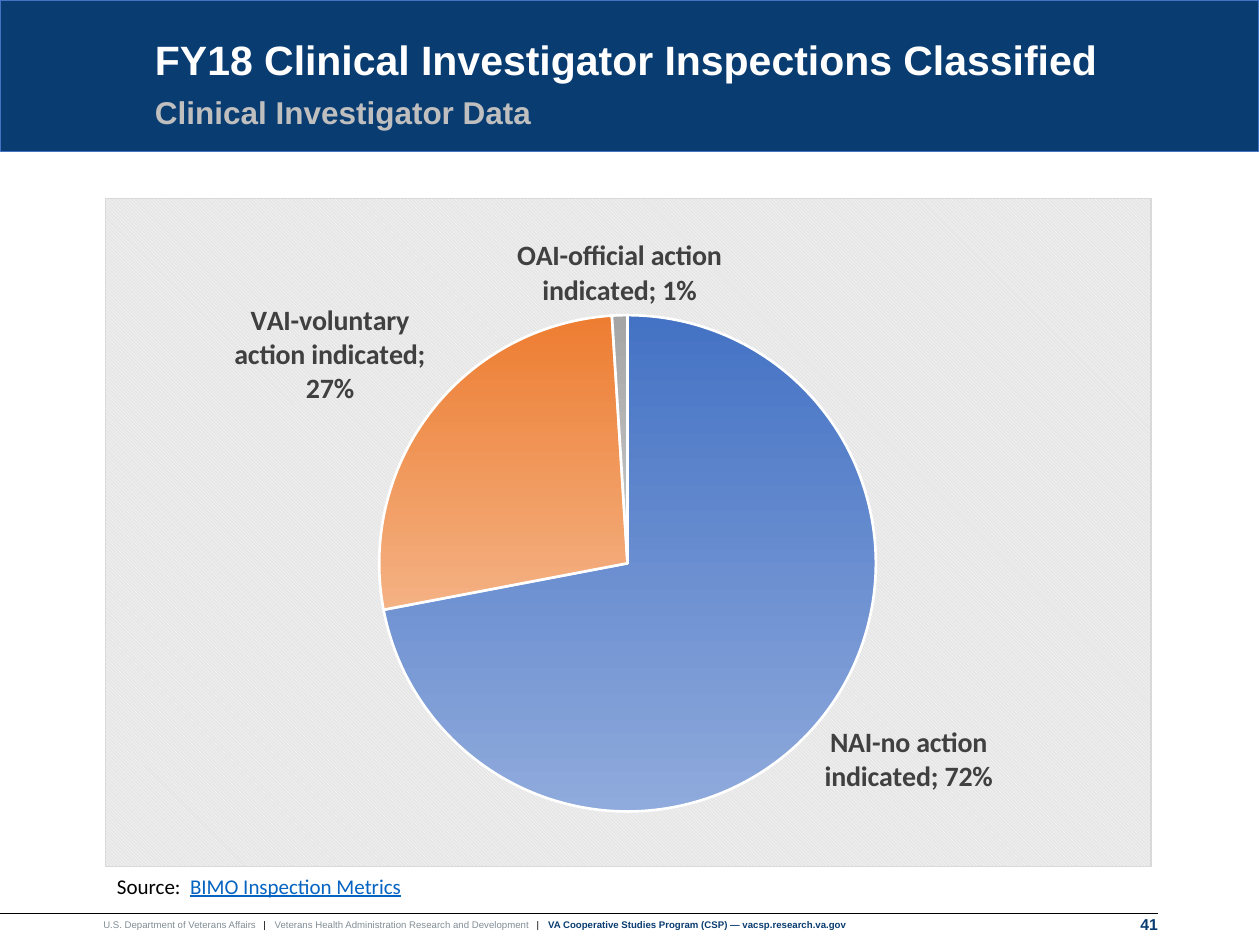
from dataclasses import dataclass

from lxml import etree
from pptx import Presentation
from pptx import util as u
from pptx.chart.data import CategoryChartData
from pptx.dml.color import RGBColor
from pptx.enum import chart as ch, shapes, text
from pptx.oxml import parse_xml
from pptx.oxml.ns import nsdecls, qn

IN = u.Inches


@dataclass(frozen=True)
class Theme:
    head: str = "Arial"
    body: str = "Calibri"
    navy: str = "093C71"
    blue: str = "4472C4"
    white: str = "FFFFFF"
    black: str = "000000"
    silver: str = "BFBFBF"
    slate: str = "828E96"
    dark: str = "404040"
    link: str = "0563C1"
    edge: str = "D9D9D9"
    panel: str = "E6E6E6"
    title: float = 23.4
    sub: float = 18
    label: float = 16
    note: float = 12
    base: float = 10
    num: float = 9
    foot: float = 5.5


T = Theme()
SLICES = [
    ("NAI-no action indicated", 0.72, (T.blue, "8FAADC")),
    ("VAI-voluntary action indicated", 0.27, ("ED7D31", "F4B183")),
    ("OAI-official action indicated", 0.01, ("A5A5A5", "C9C9C9")),
]


def rgb(code):
    return RGBColor.from_string(code)


def style(font, name, size, color, bold=False, line=False):
    font.name, font.size, font.bold = name, u.Pt(size), bold
    font.color.rgb = rgb(color)
    if line:
        font.underline = True


def write(shape, runs, name=T.head, size=T.note, color=T.black, bold=False,
          align=None, anchor=text.MSO_ANCHOR.TOP, pad=(0, 0), space=None,
          tabs=()):
    """Fill a shape with one paragraph; runs are (text, format changes)."""
    frame = shape.text_frame
    frame.word_wrap = True
    frame.auto_size = text.MSO_AUTO_SIZE.NONE
    frame.vertical_anchor = anchor
    frame.margin_left = frame.margin_right = IN(pad[0])
    frame.margin_top = frame.margin_bottom = IN(pad[1])
    para = frame.paragraphs[0]
    if align is not None:
        para.alignment = align
    if space:
        para.line_spacing = space
    if tabs:
        stops = etree.SubElement(para._p.get_or_add_pPr(), qn("a:tabLst"))
        for stop in tabs:
            etree.SubElement(stops, qn("a:tab"), pos=str(IN(stop)), algn="l")
    for words, extra in runs:
        run = para.add_run()
        run.text = words
        look = dict(name=name, size=size, color=color, bold=bold)
        style(run.font, **{**look, **extra})


def box(slide, place):
    return slide.shapes.add_textbox(*map(IN, place))


def banner(slide):
    band = slide.shapes.add_shape(shapes.MSO_SHAPE.RECTANGLE,
                                  0, 0, IN(9.99), IN(1.2))
    band.shadow.inherit = False
    band.fill.solid()
    band.fill.fore_color.rgb = rgb(T.navy)
    band.line.color.rgb = rgb(T.blue)
    band.line.width = u.Pt(0.5)
    # Send the band behind the title
    slide.shapes._spTree.insert(2, band._element)

    title = slide.shapes.title
    title.left, title.top, title.width, title.height = map(
        IN, (1.23, 0, 8.77, 0.67))
    write(title, [("FY18 Clinical Investigator Inspections Classified", {})],
          size=T.title, color=T.white, bold=True, space=0.9,
          align=text.PP_ALIGN.LEFT, anchor=text.MSO_ANCHOR.BOTTOM)
    write(box(slide, (1.23, 0.77, 7.88, 0.47)),
          [("Clinical Investigator Data", {})],
          size=T.sub, color=T.silver, bold=True, space=0.9)


def backdrop(chart):
    """Hatched panel and fixed plot position, which need XML."""
    panel = parse_xml(
        f'<c:spPr {nsdecls("c", "a")}><a:pattFill prst="dkDnDiag">'
        f'<a:fgClr><a:srgbClr val="{T.white}"/></a:fgClr>'
        f'<a:bgClr><a:srgbClr val="{T.panel}"/></a:bgClr></a:pattFill>'
        f'<a:ln w="{u.Pt(0.75)}"><a:solidFill><a:srgbClr val="{T.edge}"/>'
        '</a:solidFill></a:ln></c:spPr>')
    root = chart._chartSpace
    root.find(qn("c:txPr")).addprevious(panel)

    area = root.find(".//" + qn("c:plotArea"))
    for old in area.findall(qn("c:layout")):
        area.remove(old)
    layout = etree.Element(qn("c:layout"))
    manual = etree.SubElement(layout, qn("c:manualLayout"))
    for tag, val in (("layoutTarget", "inner"), ("xMode", "edge"),
                     ("yMode", "edge"), ("x", 0.262), ("y", 0.174),
                     ("w", 0.475), ("h", 0.745)):
        etree.SubElement(manual, qn("c:" + tag), val=str(val))
    area.insert(0, layout)


def pie(slide):
    data = CategoryChartData(number_format="0%")
    data.categories = [name for name, _, _ in SLICES]
    data.add_series("Series 1", [share for _, share, _ in SLICES])
    chart = slide.shapes.add_chart(
        ch.XL_CHART_TYPE.PIE, *map(IN, (0.83, 1.57, 8.31, 5.31)), data).chart
    chart.has_title = chart.has_legend = False
    style(chart.font, T.body, T.base, T.black)
    backdrop(chart)
    chart.plots[0].vary_by_categories = True

    # Slices fade downwards
    series = chart.plots[0].series[0]
    for i, (_, _, fade) in enumerate(SLICES):
        form = series.points[i].format
        form.fill.gradient()
        form.fill.gradient_angle = 270
        for stop, color in zip(form.fill.gradient_stops, fade):
            stop.color.rgb = rgb(color)
        form.line.color.rgb = rgb(T.white)
        form.line.width = u.Pt(1.5)

    # Labels
    labels = series.data_labels
    labels.show_value = labels.show_category_name = True
    labels.number_format = "0%"
    labels.number_format_is_linked = False
    labels.position = ch.XL_LABEL_POSITION.OUTSIDE_END
    style(labels.font, T.body, T.label, T.dark, bold=True)
    mark = etree.Element(qn("c:separator"))
    mark.text = "; "
    labels._element.find(qn("c:showBubbleSize")).addnext(mark)


def footer(slide):
    rule = slide.shapes.add_connector(shapes.MSO_CONNECTOR.STRAIGHT,
                                      0, IN(7.25), IN(9.19), IN(7.25))
    rule.line.color.rgb = rgb(T.black)
    rule.line.width = u.Pt(0.75)
    etree.SubElement(rule._element.spPr, qn("a:effectLst"))
    bar = ("\t|\t", {"color": T.black})
    write(box(slide, (0.82, 7.29, 6.04, 0.19)), [
        ("U.S. Department of Veterans Affairs", {}), bar,
        ("Veterans Health Administration Research and Development", {}), bar,
        ("VA Cooperative Studies Program (CSP) — vacsp.research.va.gov",
         {"color": T.navy, "bold": True}),
    ], size=T.foot, color=T.slate, tabs=(1.27, 1.36, 3.44, 3.53))
    write(box(slide, (8.73, 7.26, 0.46, 0.2)), [("41", {})],
          size=T.num, color=T.navy, bold=True, align=text.PP_ALIGN.RIGHT)


def main():
    deck = Presentation()
    deck.slide_width, deck.slide_height = IN(10), IN(7.5)
    slide = deck.slides.add_slide(deck.slide_layouts[5])
    banner(slide)
    pie(slide)
    # Source line
    write(box(slide, (0.83, 6.88, 8.28, 0.3)),
          [("Source:\t", {}),
           ("BIMO Inspection Metrics", {"color": T.link, "line": True})],
          name=T.body, pad=(0.1, 0.05), tabs=(0.58,))
    footer(slide)
    deck.save("out.pptx")


if __name__ == "__main__":
    main()
